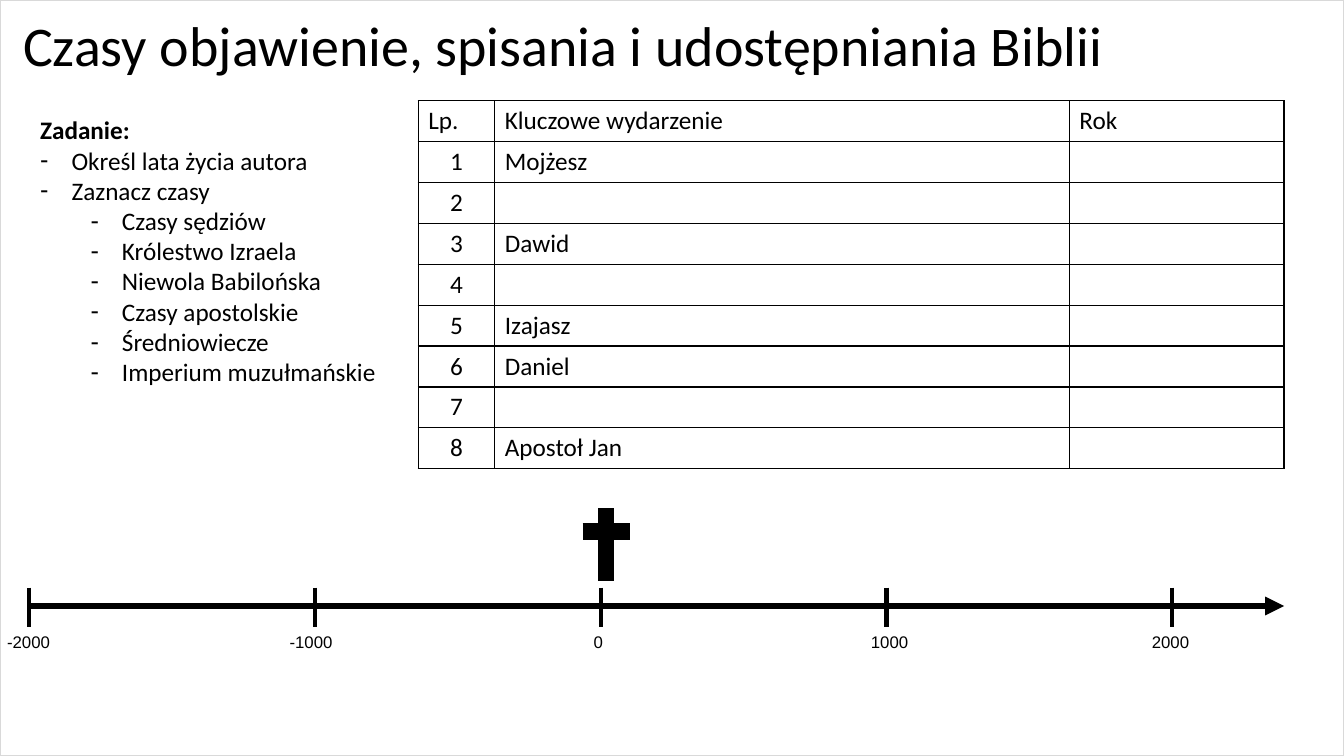
"""Build a worksheet slide about the times in which the Bible was revealed and written."""
from dataclasses import dataclass
from typing import Any

from lxml.etree import SubElement
from pptx import Presentation
from pptx.dml.color import RGBColor
from pptx.enum.shapes import MSO_CONNECTOR, MSO_SHAPE
from pptx.enum.text import MSO_ANCHOR, MSO_AUTO_SIZE, PP_ALIGN
from pptx.oxml.ns import qn
from pptx.util import Cm, Pt

COLOURS = {"ink": "000000", "paper": "FFFFFF", "frame": "D9D9D9"}
SLIDE_WIDTH, SLIDE_HEIGHT = 33.87, 19.05
COLUMN_WIDTHS = (1.93, 14.48, 5.41)
ROW_HEIGHT = 1.03
HEADINGS = ("Lp.", "Kluczowe wydarzenie", "Rok")
EVENTS = ("Mojżesz", "", "Dawid", "", "Izajasz", "Daniel", "", "Apostoł Jan")
AXIS_LEFT, TICK_STEP = 0.74, 7.2


@dataclass(frozen=True)
class Task:
    text: str
    level: int = 0
    bullet: bool = True


@dataclass(frozen=True)
class Year:
    text: str
    centre: float
    width: float


@dataclass(frozen=True)
class Stroke:
    start: tuple[float, float]
    end: tuple[float, float]
    width: float
    arrow: bool = False


TASKS = (
    Task("Zadanie:", bullet=False),
    Task("Określ lata życia autora"),
    Task("Zaznacz czasy"),
    Task("Czasy sędziów", 1),
    Task("Królestwo Izraela", 1),
    Task("Niewola Babilońska", 1),
    Task("Czasy apostolskie", 1),
    Task("Średniowiecze", 1),
    Task("Imperium muzułmańskie", 1),
)
YEARS = (
    Year("-2000", 0.72, 1.3),
    Year("-1000", 7.84, 1.3),
    Year("0", 15.08, 0.4),
    Year("1000", 22.42, 1.2),
    Year("2000", 29.5, 1.2),
)
AXIS = Stroke((0.76, 15.27), (32.36, 15.27), 4.5, arrow=True)
CROSS = (
    Stroke((14.68, 13.39), (15.88, 13.39), 12),
    Stroke((15.27, 14.63), (15.27, 12.8), 12),
)


def colour(name: str) -> RGBColor:
    """Return a named colour."""
    return RGBColor.from_string(COLOURS[name])


def write_text(paragraph: Any, text: str, *, size: float = 18, font: str = "Calibri",
               bold: bool = False, alignment: PP_ALIGN = PP_ALIGN.LEFT) -> None:
    """Write one formatted run into a paragraph."""
    paragraph.alignment = alignment
    run = paragraph.add_run()
    run.text = text
    run.font.size, run.font.name, run.font.bold = Pt(size), font, bold
    run.font.color.rgb = colour("ink")


def place(shape: Any, left: float, top: float, width: float, height: float) -> None:
    """Move and size a shape in centimetres."""
    shape.left, shape.top = Cm(left), Cm(top)
    shape.width, shape.height = Cm(width), Cm(height)


def draw_stroke(shapes: Any, stroke: Stroke) -> None:
    """Draw a straight black line, with an arrowhead if asked."""
    connector = shapes.add_connector(
        MSO_CONNECTOR.STRAIGHT, *(Cm(value) for value in stroke.start + stroke.end))
    connector.line.color.rgb = colour("ink")
    connector.line.width = Pt(stroke.width)
    properties = connector._element.spPr
    if stroke.arrow:
        SubElement(properties.find(qn("a:ln")), qn("a:tailEnd"), type="triangle")
    SubElement(properties, qn("a:effectLst"))


def draw_frame(slide: Any) -> None:
    """Paint the background and its thin grey frame."""
    slide.background.fill.solid()
    slide.background.fill.fore_color.rgb = colour("paper")
    frame = slide.shapes.add_shape(
        MSO_SHAPE.RECTANGLE, 0, 0, Cm(SLIDE_WIDTH), Cm(SLIDE_HEIGHT))
    frame.shadow.inherit = False
    frame.fill.background()
    frame.line.color.rgb = colour("frame")
    frame.line.width = Pt(1)


def fill_title(title: Any) -> None:
    """Place and write the title."""
    place(title, 0.33, 0.23, 32.99, 1.98)
    title.text_frame.auto_size = MSO_AUTO_SIZE.NONE
    paragraph = title.text_frame.paragraphs[0]
    paragraph.line_spacing = 0.9
    write_text(paragraph, "Czasy objawienie, spisania i udostępniania Biblii", size=40)


def fill_tasks(body: Any) -> None:
    """Place the body and write the two-level task list."""
    place(body, 0.76, 2.76, 9.35, 7.19)
    frame = body.text_frame
    frame.auto_size = MSO_AUTO_SIZE.NONE
    for index, task in enumerate(TASKS):
        paragraph = frame.add_paragraph() if index else frame.paragraphs[0]
        paragraph.level = task.level
        paragraph.space_before = Pt(0)
        write_text(paragraph, task.text, bold=not task.bullet)
        properties = paragraph._p.get_or_add_pPr()
        indent = Cm(0.79) if task.bullet else 0
        properties.set("marL", str(indent + Cm(1.27) * task.level))
        properties.set("indent", str(-indent))
        if task.bullet:
            SubElement(properties, qn("a:buChar"), char="-")
        else:
            SubElement(properties, qn("a:buNone"))


def format_cell(cell: Any) -> None:
    """Clear the cell fill and give it thin black borders."""
    properties = cell._tc.get_or_add_tcPr()
    for side in ("a:lnL", "a:lnR", "a:lnT", "a:lnB"):
        border = SubElement(properties, qn(side), w=str(Pt(1)))
        SubElement(SubElement(border, qn("a:solidFill")), qn("a:srgbClr"), val=COLOURS["ink"])
    cell.fill.background()


def draw_table(slide: Any) -> None:
    """Draw the table of key events."""
    rows = [HEADINGS] + [(str(number), event, "") for number, event in enumerate(EVENTS, 1)]
    table = slide.shapes.add_table(
        len(rows), len(HEADINGS), Cm(10.54), Cm(2.54),
        Cm(sum(COLUMN_WIDTHS)), Cm(ROW_HEIGHT * len(rows))).table
    table.first_row = table.horz_banding = False
    for column, width in zip(table.columns, COLUMN_WIDTHS):
        column.width = Cm(width)
    for row_index, row in enumerate(rows):
        table.rows[row_index].height = Cm(ROW_HEIGHT)
        for column_index, text in enumerate(row):
            cell = table.cell(row_index, column_index)
            format_cell(cell)
            if text:
                numbered = row_index > 0 and column_index == 0
                write_text(cell.text_frame.paragraphs[0], text,
                           alignment=PP_ALIGN.CENTER if numbered else PP_ALIGN.LEFT)


def draw_timeline(slide: Any) -> None:
    """Draw the axis with its ticks, years and cross."""
    for index, year in enumerate(YEARS):
        tick = AXIS_LEFT + index * TICK_STEP
        draw_stroke(slide.shapes, Stroke((tick, 14.81), (tick, 15.8), 3))
        label = slide.shapes.add_textbox(
            Cm(year.centre - year.width / 2), Cm(15.85), Cm(year.width), Cm(0.66))
        frame = label.text_frame
        frame.word_wrap = False
        frame.auto_size = MSO_AUTO_SIZE.SHAPE_TO_FIT_TEXT
        frame.vertical_anchor = MSO_ANCHOR.MIDDLE
        frame.margin_left = frame.margin_right = Cm(0.08)
        frame.margin_top = frame.margin_bottom = Cm(0.08)
        write_text(frame.paragraphs[0], year.text, size=12, font="Arial",
                   alignment=PP_ALIGN.CENTER)
    draw_stroke(slide.shapes, AXIS)
    cross = slide.shapes.add_group_shape()
    for stroke in CROSS:
        draw_stroke(cross.shapes, stroke)


def main() -> None:
    """Build and save the presentation."""
    presentation = Presentation()
    presentation.slide_width, presentation.slide_height = Cm(SLIDE_WIDTH), Cm(SLIDE_HEIGHT)
    slide = presentation.slides.add_slide(presentation.slide_layouts[1])
    draw_frame(slide)
    fill_title(slide.shapes.title)
    fill_tasks(slide.placeholders[1])
    draw_timeline(slide)
    draw_table(slide)
    presentation.save("out.pptx")


if __name__ == "__main__":
    main()
